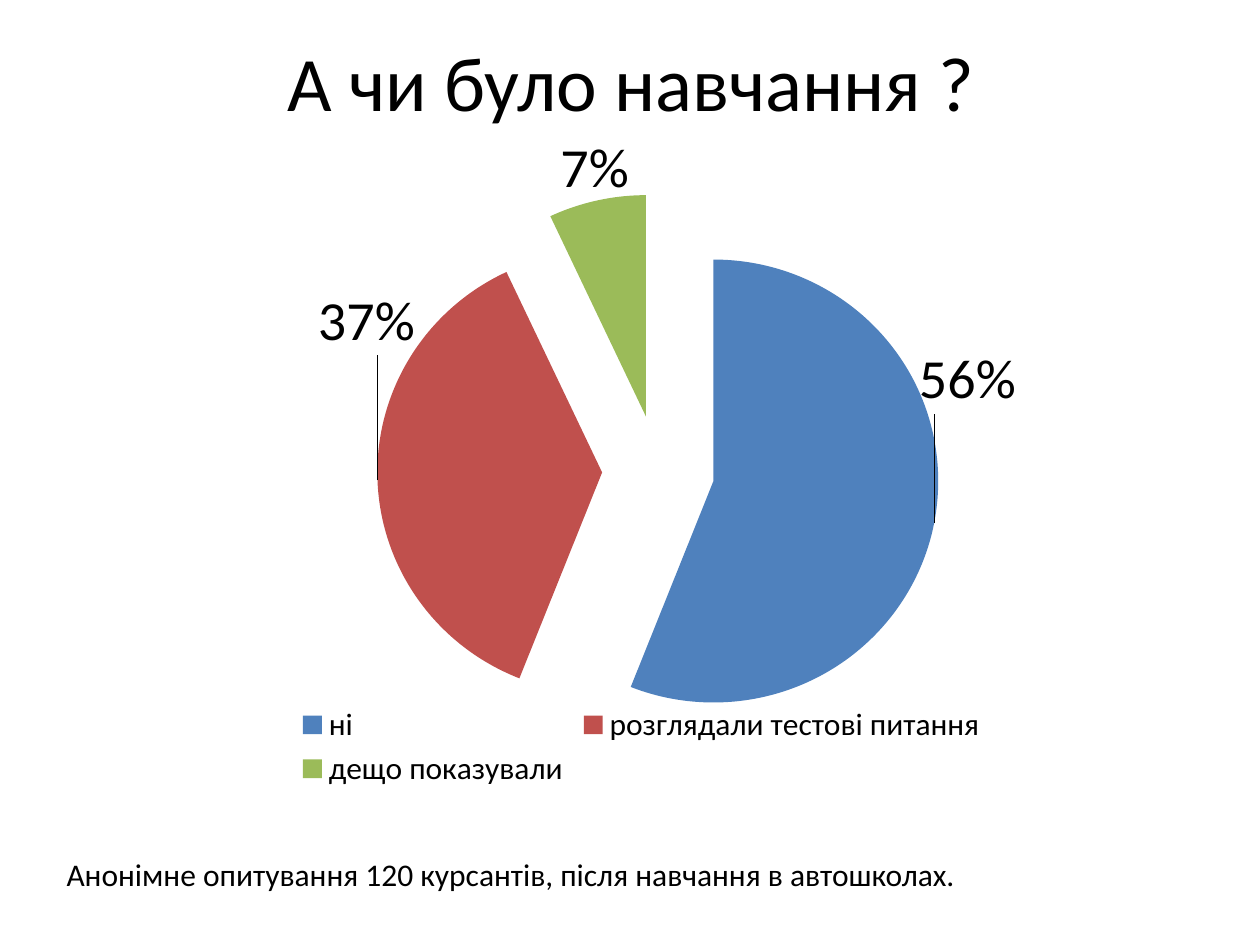
from lxml.etree import SubElement
from pptx import Presentation
from pptx.chart.data import CategoryChartData
from pptx.dml.color import RGBColor
from pptx.enum.chart import XL_CHART_TYPE, XL_LABEL_POSITION, XL_LEGEND_POSITION
from pptx.enum.text import MSO_ANCHOR, PP_ALIGN
from pptx.oxml import parse_xml
from pptx.oxml.ns import nsdecls, qn
from pptx.util import Inches, Pt

# answer, share, colour, shift of its label as a part of the chart size
ANSWERS = [
    ("ні", 0.56, "4F81BD", (-0.02, -0.27)),
    ("розглядали тестові питання", 0.37, "C0504D", (0.04, -0.24)),
    ("дещо показували", 0.07, "9BBB59", (0.03, 0)),
]


def color(code):
    return RGBColor.from_string(code)


def layout(**parts):
    """Return a manual chart layout with the given settings."""
    node = parse_xml(f"<c:layout {nsdecls('c')}><c:manualLayout/></c:layout>")
    for name, value in parts.items():
        SubElement(node[0], qn(f"c:{name}")).set("val", str(value))
    return node


class Page:
    face = "Calibri"
    ink = "000000"

    def __init__(self, slide):
        self.slide = slide

    def style(self, font, size):
        font.name = self.face
        font.size = Pt(size)
        font.color.rgb = color(self.ink)

    def text(self, words, box, size, align=PP_ALIGN.LEFT,
             anchor=MSO_ANCHOR.TOP, wrap=True):
        frame = self.slide.shapes.add_textbox(*map(Inches, box)).text_frame
        frame.text = words
        frame.word_wrap = wrap
        frame.vertical_anchor = anchor
        line = frame.paragraphs[0]
        line.alignment = align
        self.style(line.runs[0].font, size)

    def pie(self, answers, box, size, label_size, burst):
        data = CategoryChartData(number_format="0%")
        data.categories = [row[0] for row in answers]
        data.add_series("Series 1", [row[1] for row in answers])
        chart = self.slide.shapes.add_chart(
            XL_CHART_TYPE.PIE, *map(Inches, box), data).chart
        self.style(chart.font, size)
        chart.has_title = False
        chart.has_legend = True
        chart.legend.position = XL_LEGEND_POSITION.BOTTOM
        chart.legend.include_in_layout = False

        plot = chart.plots[0]
        plot.vary_by_categories = True
        area = chart.element.find(".//" + qn("c:plotArea"))
        for old in area.findall(qn("c:layout")):
            area.remove(old)
        area.insert(0, layout(layoutTarget="inner", xMode="edge", yMode="edge",
                              x=0.03, y=0.09, w=0.97, h=0.84))

        series = plot.series[0]
        labels = series.data_labels
        labels.show_value = True
        labels.number_format = "0%"
        labels.number_format_is_linked = False
        labels.position = XL_LABEL_POSITION.OUTSIDE_END
        self.style(labels.font, label_size)
        for point, (_, _, fill, shift) in enumerate(answers):
            self.slice(series.points[point], fill, shift, label_size)
        root = chart.element
        for mark, (_, _, _, (x, y)) in zip(root.iter(qn("c:dLbl")), answers):
            mark.insert(1, layout(x=x, y=y))
        first = root.find(".//" + qn("c:dPt"))
        first.addprevious(
            parse_xml(f'<c:explosion {nsdecls("c")} val="{burst}"/>'))

    def slice(self, point, fill, shift, size):
        point.format.fill.solid()
        point.format.fill.fore_color.rgb = color(fill)
        label = point.data_label
        self.style(label.font, size)
        label.position = XL_LABEL_POSITION.OUTSIDE_END


def main():
    deck = Presentation()
    deck.slide_width, deck.slide_height = Inches(10), Inches(7.5)
    page = Page(deck.slides.add_slide(deck.slide_layouts[6]))
    page.text("А чи було навчання ?", (0.51, 0.13, 9, 1.02), 44,
              PP_ALIGN.CENTER, MSO_ANCHOR.MIDDLE)
    page.pie(ANSWERS, (0.59, 0.99, 9, 5.31), 18, 32, 25)
    page.text("Анонімне опитування 120 курсантів, після навчання в автошколах.",
              (0.43, 6.74, 7.27, 0.4), 18, wrap=False)
    deck.save("out.pptx")


if __name__ == "__main__":
    main()
